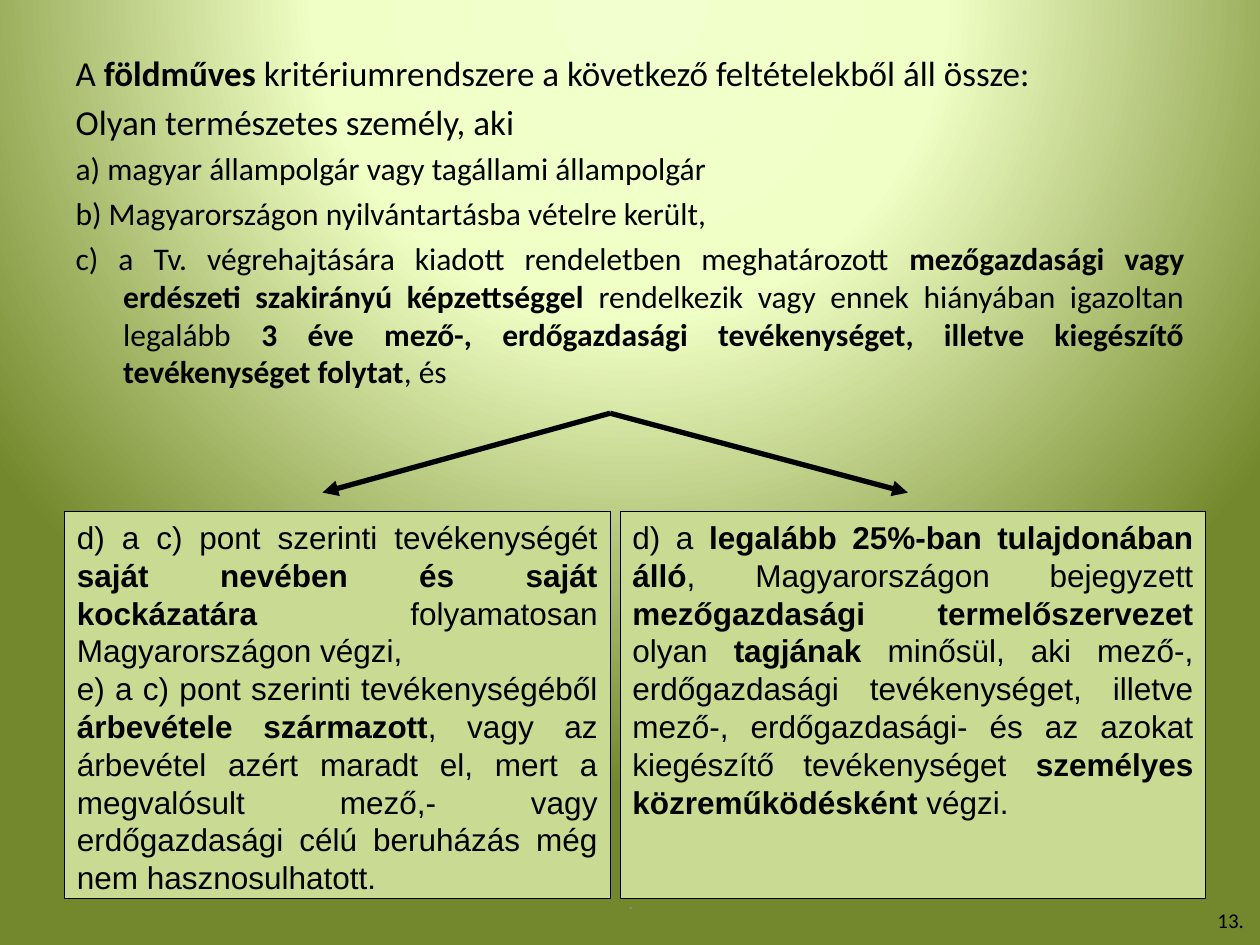
from pptx import Presentation
from pptx import util as u
from pptx.dml.color import RGBColor
from pptx.enum import shapes, text
from pptx.oxml import parse_xml
from pptx.oxml.ns import nsdecls, qn
from lxml import etree

CRITERIA = [
    (20, "A **földműves** kritériumrendszere a következő feltételekből áll össze:"),
    (20, "Olyan természetes személy, aki"),
    (18, "a) magyar állampolgár vagy tagállami állampolgár"),
    (18, "b) Magyarországon nyilvántartásba vételre került, "),
    (18, "c) a Tv. végrehajtására kiadott rendeletben meghatározott "
         "**mezőgazdasági vagy erdészeti szakirányú képzettséggel** rendelkezik "
         "vagy ennek hiányában igazoltan legalább **3 éve mező-, erdőgazdasági "
         "tevékenységet, illetve kiegészítő tevékenységet folytat**, és"),
]
OWN_ACTIVITY = [
    (18, "d) a c) pont szerinti tevékenységét **saját nevében és saját kockázatára "
         "**folyamatosan Magyarországon végzi, "),
    (18, "e) a c) pont szerinti tevékenységéből **árbevétele származott**, vagy az "
         "árbevétel azért maradt el, mert a megvalósult mező,- vagy "
         "erdőgazdasági célú beruházás még nem hasznosulhatott."),
]
MEMBERSHIP = [
    (18, "d) a **legalább 25%-ban tulajdonában álló**, Magyarországon bejegyzett "
         "**mezőgazdasági termelőszervezet **olyan **tagjának** minősül, aki "
         "mező-, erdőgazdasági tevékenységet, illetve mező-, erdőgazdasági- és "
         "az azokat kiegészítő tevékenységet **személyes közreműködésként** végzi."),
]


def color(value):
    return RGBColor.from_string(value)


class SlideBuilder:
    BLACK, GREY, BOX_FILL = "000000", "8C8C8C", "C9DA92"
    GRADIENT = [(0, "F2FFCE"), (40, "F0FFC5"), (100, "73882C")]

    def __init__(self, slide):
        self.slide = slide

    def background(self):
        stops = "".join(
            f'<a:gs pos="{position * 1000}"><a:srgbClr val="{value}"/></a:gs>'
            for position, value in self.GRADIENT)
        self.slide.element.cSld.insert(0, parse_xml(
            f'<p:bg {nsdecls("p", "a")}><p:bgPr><a:gradFill rotWithShape="1">'
            f'<a:gsLst>{stops}</a:gsLst><a:path path="circle">'
            '<a:fillToRect l="50000" t="-80000" r="50000" b="180000"/></a:path>'
            '</a:gradFill><a:effectLst/></p:bgPr></p:bg>'))

    def fill_text(self, frame, lines, font, align=text.PP_ALIGN.JUSTIFY, ink=BLACK):
        """Fill the frame with (size, wording) lines; ** switches bold on and off."""
        frame.word_wrap = True
        frame.auto_size = text.MSO_AUTO_SIZE.NONE
        for index, (size, wording) in enumerate(lines):
            para = frame.add_paragraph() if index else frame.paragraphs[0]
            para.alignment = align
            for number, part in enumerate(wording.split("**")):
                if not part:
                    continue
                span = para.add_run()
                span.text = part
                span.font.name = font
                span.font.size = u.Pt(size)
                span.font.bold = number % 2 == 1
                span.font.color.rgb = color(ink)

    def body(self, left, top, width, height, lines):
        box = self.slide.placeholders[1]
        box.left, box.top, box.width, box.height = map(
            u.Cm, (left, top, width, height))
        self.fill_text(box.text_frame, lines, "Calibri")
        indent = u.Cm(0.96)
        for para in box.text_frame.paragraphs:
            para.space_before = u.Pt(lines[0][0] * 0.2)
            properties = para._p.get_or_add_pPr()
            properties.set("marL", str(indent))
            properties.set("indent", str(-indent))
            etree.SubElement(properties, qn("a:buNone"))

    def panel(self, left, top, width, height, lines):
        box = self.slide.shapes.add_shape(
            shapes.MSO_SHAPE.RECTANGLE, *map(u.Cm, (left, top, width, height)))
        box.shadow.inherit = False
        box.fill.solid()
        box.fill.fore_color.rgb = color(self.BOX_FILL)
        box.line.color.rgb = color(self.BLACK)
        box.line.width = u.Pt(0.5)
        box.text_frame.vertical_anchor = text.MSO_ANCHOR.TOP
        self.fill_text(box.text_frame, lines, "Arial")

    def arrow(self, start, end):
        line = self.slide.shapes.add_connector(
            shapes.MSO_CONNECTOR.STRAIGHT, *map(u.Cm, start + end))
        line.line.color.rgb = color(self.BLACK)
        line.line.width = u.Pt(3)
        etree.SubElement(line.line._get_or_add_ln(), qn("a:tailEnd"), type="triangle")
        etree.SubElement(line._element.spPr, qn("a:effectLst"))

    def footer(self, left, top, width, wording, align, ink):
        box = self.slide.shapes.add_textbox(*map(u.Cm, (left, top, width, 1.02)))
        box.text_frame.vertical_anchor = text.MSO_ANCHOR.MIDDLE
        self.fill_text(box.text_frame, [(12, wording)], "Calibri", align, ink)


def main():
    deck = Presentation()
    deck.slide_width, deck.slide_height = u.Cm(25.4), u.Cm(19.05)
    slide = deck.slides.add_slide(deck.slide_layouts.get_by_name("Title and Content"))
    title = slide.shapes.title.element
    title.getparent().remove(title)

    builder = SlideBuilder(slide)
    builder.background()
    builder.body(1.27, 0.91, 22.86, 17.6, CRITERIA)
    for left, width, lines in ((1.3, 11, OWN_ACTIVITY), (12.5, 11.81, MEMBERSHIP)):
        builder.panel(left, 10.32, width, 7.8, lines)
    for tip in (6.5, 18.3):
        builder.arrow((12.3, 8.33), (tip, 9.93))
    builder.footer(19.41, 18.03, 5.92, "13.", text.PP_ALIGN.RIGHT, builder.BLACK)
    builder.footer(8.69, 17.65, 8.05, ".", text.PP_ALIGN.CENTER, builder.GREY)
    deck.save("out.pptx")


if __name__ == "__main__":
    main()
